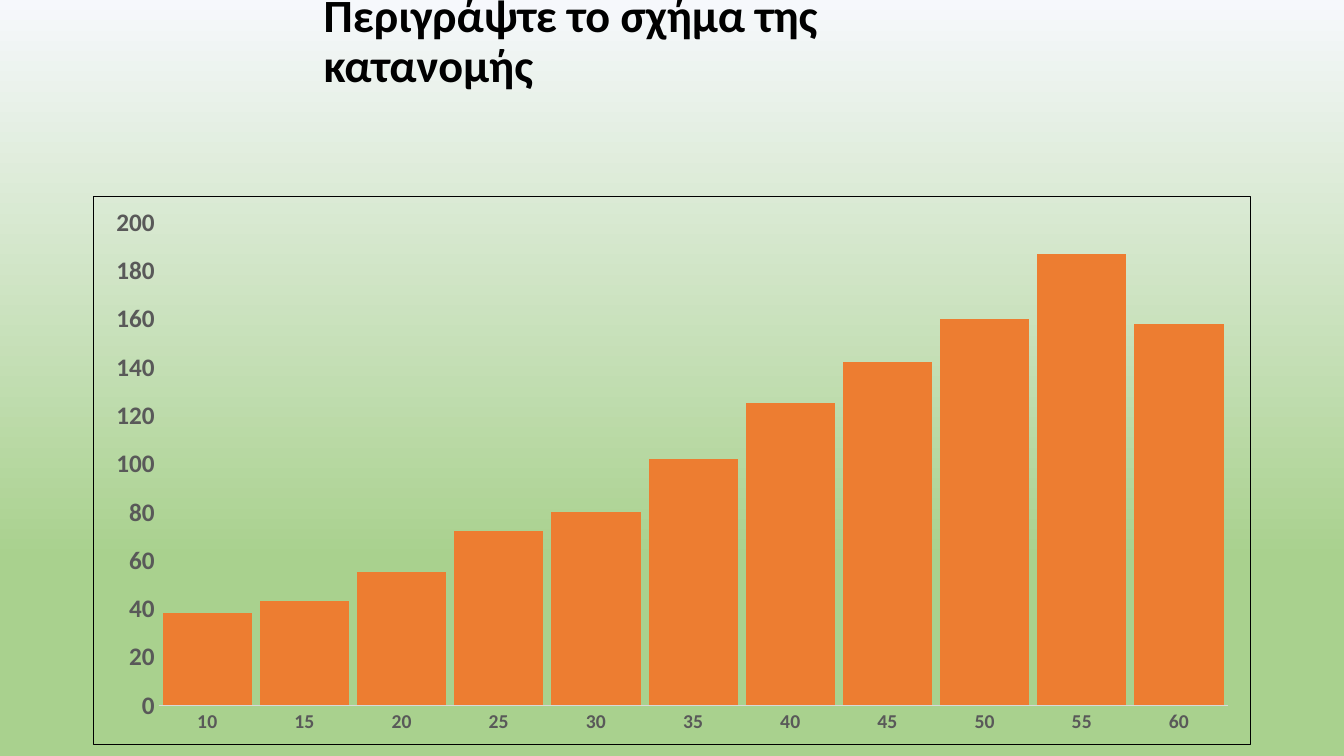
import pptx
import pptx.chart.data
import pptx.dml.color
import pptx.enum.chart
import pptx.enum.text
import pptx.oxml
import pptx.oxml.ns
import pptx.util


def tint(code):
    return pptx.dml.color.RGBColor.from_string(code)


def write(box, text, size=18, color="000000", bold=False, face="Calibri", gap=1.0):
    frame = box.text_frame
    frame.word_wrap = True
    frame.auto_size = pptx.enum.text.MSO_AUTO_SIZE.NONE
    frame.vertical_anchor = pptx.enum.text.MSO_ANCHOR.MIDDLE
    line = frame.paragraphs[0]
    line.alignment = pptx.enum.text.PP_ALIGN.LEFT
    line.line_spacing = gap
    run = line.add_run()
    run.text = text
    run.font.size = pptx.util.Pt(size)
    run.font.bold = bold
    run.font.name = face
    run.font.color.rgb = tint(color)


deck = pptx.Presentation()
deck.slide_width = wide = pptx.util.Inches(13.33)
deck.slide_height = high = pptx.util.Inches(7.5)
slide = deck.slides.add_slide(deck.slide_layouts[5])

fill = slide.background.fill
fill.gradient()
fill.gradient_angle = 270
for stop, (place, code) in zip(fill.gradient_stops, [(0, "F6F8FC"), (0.74, "A9D18E")]):
    stop.position = place
    stop.color.rgb = tint(code)

title = slide.shapes.title
title.left, title.top = int(wide * 7 / 30), int(high * 0.11 / 7.5)
title.width, title.height = int(wide * 8 / 15), int(high / 12)
write(title, "Περιγράψτε το σχήμα της κατανομής", size=33, bold=True, gap=0.9)

data = pptx.chart.data.CategoryChartData()
data.categories = [str(step) for step in range(10, 61, 5)]
data.add_series("Series 1", [38, 43, 55, 72, 80, 102, 125, 142, 160, 187, 158])
side = int(wide * 0.92 / 13.33)
chart = slide.shapes.add_chart(
    pptx.enum.chart.XL_CHART_TYPE.COLUMN_CLUSTERED,
    side, int(high * 1.94 / 7.5), wide - 2 * side, int(high * 5.45 / 7.5), data,
).chart
chart.has_legend = False
chart.has_title = False
chart.font.name = "Calibri"
chart.font.size = pptx.util.Pt(10)
chart.font.color.rgb = tint("000000")

plot = chart.plots[0]
plot.gap_width = 9
plot.overlap = -27
plot.vary_by_categories = False
bars = plot.series[0].format.fill
bars.solid()
bars.fore_color.rgb = tint("ED7D31")

for axis, size in [(chart.category_axis, 14), (chart.value_axis, 18)]:
    axis.has_major_gridlines = False
    axis.major_tick_mark = pptx.enum.chart.XL_TICK_MARK.NONE
    axis.minor_tick_mark = pptx.enum.chart.XL_TICK_MARK.NONE
    font = axis.tick_labels.font
    font.name = "Calibri"
    font.size = pptx.util.Pt(size)
    font.bold = True
    font.color.rgb = tint("595959")
chart.category_axis.format.line.color.rgb = tint("D9D9D9")
chart.category_axis.format.line.width = pptx.util.Pt(0.75)
chart.value_axis.format.line.fill.background()
chart.value_axis.minimum_scale = 0
chart.value_axis.maximum_scale = 200
chart.value_axis.major_unit = 20

frame = pptx.oxml.parse_xml(
    f'<c:spPr {pptx.oxml.ns.nsdecls("c", "a")}><a:noFill/>'
    '<a:ln w="9525"><a:solidFill><a:srgbClr val="000000"/></a:solidFill></a:ln></c:spPr>'
)
chart.element.find(pptx.oxml.ns.qn("c:chart")).addnext(frame)

deck.save("out.pptx")
